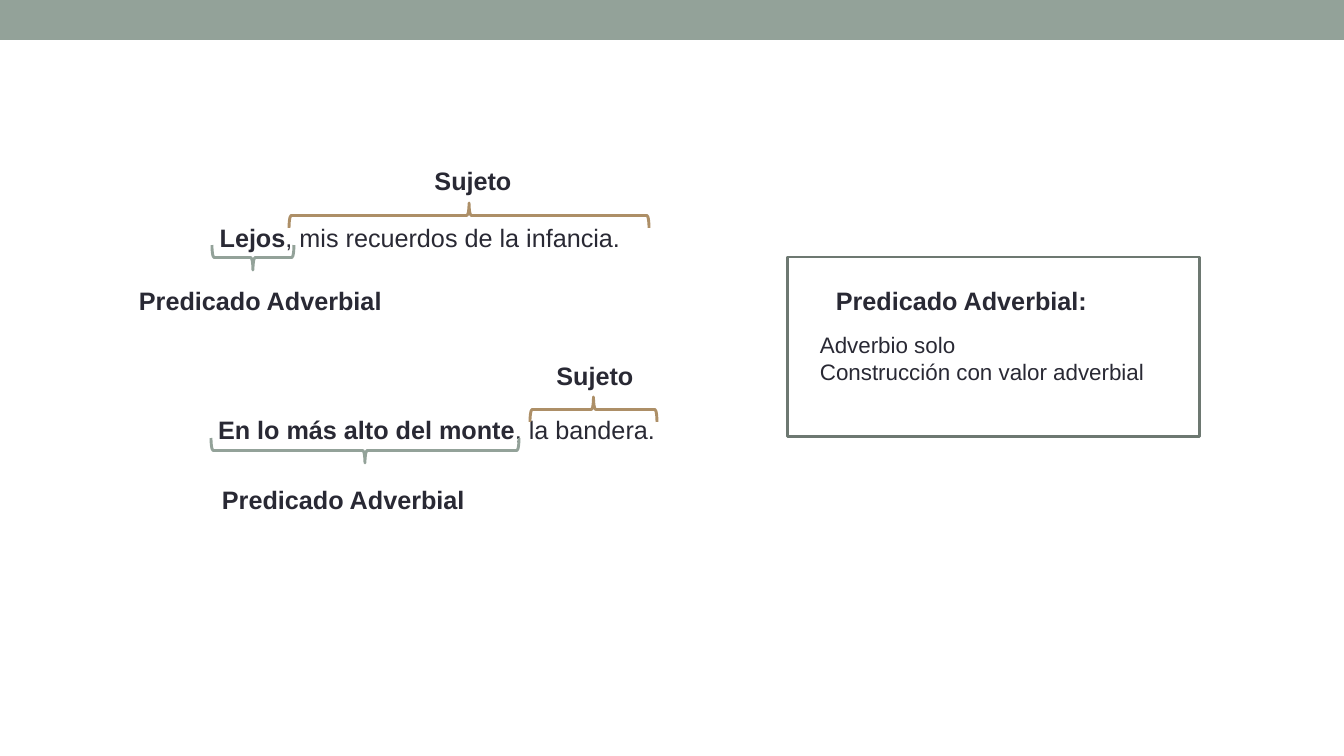
import pptx
import pptx.util
import pptx.dml.color
import pptx.enum.shapes
import pptx.enum.text

THEME = {
    "font": "Arial",
    "ink": "292934",
    "sage": "93A299",
    "tan": "AD8F67",
    "frame": "6D7871",
    "body": 18,
    "small": 16,
    "line": 2.08,
}
EMU_PER_PX = 914400 / 100.8
SLIDE_SIZE = (1344, 756)
HEADER_BAR = (0, 0, 1344, 40)
DEFINITION_FRAME = (788, 257, 412, 180)
BRACE_DEPTH = 25

SENTENCES = [
    ((163, 217, 514, 40), "Lejos", ", mis recuerdos de la infancia."),
    ((164, 409, 545, 40), "En lo más alto del monte", ", la bandera."),
]
LABELS = [
    ((412, 160, 122, 40), "Sujeto", True),
    ((534, 355, 122, 40), "Sujeto", True),
    ((129, 280, 308, 40), "Predicado Adverbial", False),
    ((212, 479, 308, 40), "Predicado Adverbial", False),
    ((826, 280, 339, 40), "Predicado Adverbial:", False),
]
DEFINITION = ((810, 326, 370, 65), ["Adverbio solo", "Construcción con valor adverbial"])
BRACES = [
    (212, 245, 82, "predicate"),
    (211, 438, 308, "predicate"),
    (289, 203, 360, "subject"),
    (530, 397, 127, "subject"),
]
BRACE_STYLES = {"predicate": (270, "sage"), "subject": (90, "tan")}


def px(value):
    return round(value * EMU_PER_PX)


def color(name):
    return pptx.dml.color.RGBColor.from_string(THEME[name])


def add_shape(page, kind, area, fill=None, line=None):
    shape = page.shapes.add_shape(kind, *map(px, area))
    shape.shadow.inherit = False
    if fill:
        shape.fill.solid()
        shape.fill.fore_color.rgb = color(fill)
    else:
        shape.fill.background()
    if line:
        shape.line.color.rgb = color(line)
        shape.line.width = pptx.util.Pt(THEME["line"])
    else:
        shape.line.fill.background()
    return shape


def add_brace(page, left, top, width, role):
    rotation, line = BRACE_STYLES[role]
    shift = (width - BRACE_DEPTH) / 2
    area = (left + shift, top - shift, BRACE_DEPTH, width)
    brace = add_shape(page, pptx.enum.shapes.MSO_SHAPE.LEFT_BRACE, area, line=line)
    brace.rotation = rotation


def add_text(page, area, lines, size="body", centered=False):
    box = page.shapes.add_textbox(*map(px, area))
    frame = box.text_frame
    frame.word_wrap = True
    frame.auto_size = pptx.enum.text.MSO_AUTO_SIZE.SHAPE_TO_FIT_TEXT
    for index, spans in enumerate(lines):
        para = frame.paragraphs[0] if index == 0 else frame.add_paragraph()
        if centered:
            para.alignment = pptx.enum.text.PP_ALIGN.CENTER
        for text, bold in spans:
            span = para.add_run()
            span.text = text
            span.font.name = THEME["font"]
            span.font.size = pptx.util.Pt(THEME[size])
            span.font.bold = bold
            span.font.color.rgb = color("ink")


def main():
    deck = pptx.Presentation()
    deck.slide_width, deck.slide_height = map(px, SLIDE_SIZE)
    page = deck.slides.add_slide(deck.slide_layouts[6])
    rectangle = pptx.enum.shapes.MSO_SHAPE.RECTANGLE

    add_shape(page, rectangle, HEADER_BAR, fill="sage")
    for area, predicate, subject in SENTENCES:
        add_text(page, area, [[(predicate, True), (subject, False)]], centered=True)
    for brace in BRACES:
        add_brace(page, *brace)
    for area, label, centered in LABELS:
        add_text(page, area, [[(label, True)]], centered=centered)
    area, lines = DEFINITION
    add_text(page, area, [[(line, False)] for line in lines], size="small")
    add_shape(page, rectangle, DEFINITION_FRAME, line="frame")

    deck.save("out.pptx")


if __name__ == "__main__":
    main()
